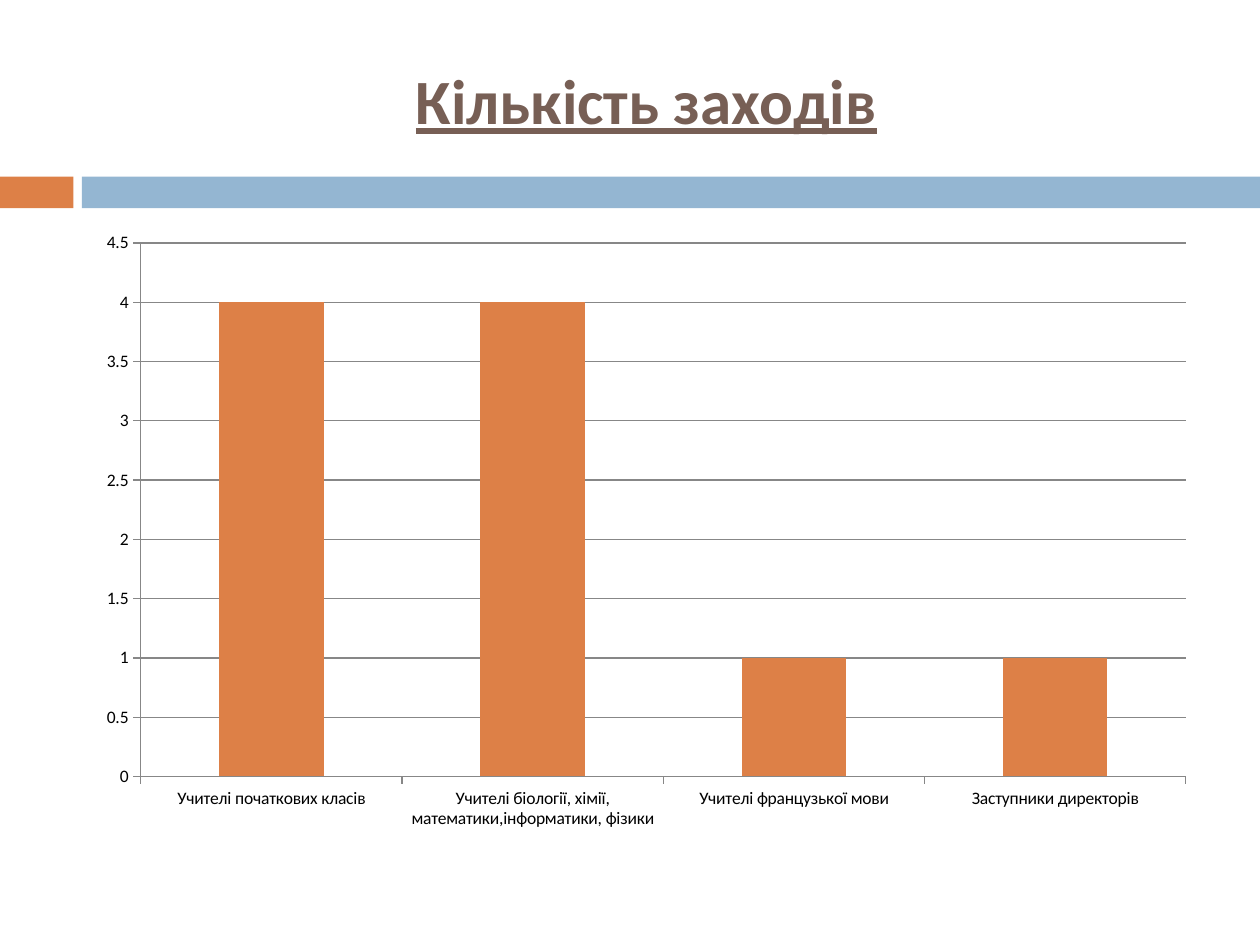
from pptx import Presentation
from pptx import util as u
from pptx.chart.data import CategoryChartData
from pptx.dml.color import RGBColor
from pptx.enum import chart as chart_enum
from pptx.enum import shapes, text

ORANGE = RGBColor(0xDD, 0x80, 0x47)
BLUE = RGBColor(0x94, 0xB6, 0xD2)
BROWN = RGBColor(0x77, 0x5F, 0x55)
GREY = RGBColor(0x87, 0x87, 0x87)
BLACK = RGBColor(0, 0, 0)
FONT = "Calibri"

SLIDE_WIDTH, SLIDE_HEIGHT = u.Cm(25.4), u.Cm(19.05)
CONTENT_LEFT, CONTENT_WIDTH = u.Cm(1.7), u.Cm(22.66)

EVENTS = {
    "Учителі початкових класів": 4,
    "Учителі біології, хімії, математики,інформатики, фізики": 4,
    "Учителі французької мови": 1,
    "Заступники директорів": 1,
}


def add_band(slide, left, top, width, height):
    """Draw the divider: a short orange block, a gap and a long blue bar."""
    block_width, gap = u.Cm(1.48), u.Cm(0.17)
    bar_offset = block_width + gap
    for offset, part_width, color in (
        (0, block_width, ORANGE),
        (bar_offset, width - bar_offset, BLUE),
    ):
        shape = slide.shapes.add_shape(
            shapes.MSO_SHAPE.RECTANGLE, left + offset, top, part_width, height
        )
        shape.shadow.inherit = False
        shape.fill.solid()
        shape.fill.fore_color.rgb = color
        shape.line.fill.background()


def add_title(slide, left, top, width, height):
    """Place and format the title placeholder."""
    title = slide.shapes.title
    title.left, title.top, title.width, title.height = left, top, width, height
    frame = title.text_frame
    frame.text = "Кількість заходів"
    frame.vertical_anchor = text.MSO_ANCHOR.MIDDLE
    paragraph = frame.paragraphs[0]
    paragraph.alignment = text.PP_ALIGN.CENTER
    font = paragraph.runs[0].font
    font.name, font.size = FONT, u.Pt(36)
    font.bold = font.underline = True
    font.color.rgb = BROWN


def add_events_chart(slide, left, top, width, height):
    """Add the column chart of events for each group of staff."""
    data = CategoryChartData()
    data.categories = list(EVENTS)
    data.add_series("Series 1", list(EVENTS.values()))
    chart = slide.shapes.add_chart(
        chart_enum.XL_CHART_TYPE.COLUMN_CLUSTERED, left, top, width, height, data
    ).chart
    chart.has_title = False
    chart.has_legend = False
    chart.font.name, chart.font.size = FONT, u.Pt(10)
    chart.font.color.rgb = BLACK

    plot = chart.plots[0]
    plot.gap_width = 150
    plot.vary_by_categories = False
    fill = plot.series[0].format.fill
    fill.solid()
    fill.fore_color.rgb = ORANGE

    value_axis = chart.value_axis
    value_axis.minimum_scale, value_axis.maximum_scale = 0, 4.5
    value_axis.major_unit = 0.5
    value_axis.has_major_gridlines = True
    for axis in (chart.category_axis, value_axis):
        axis.major_tick_mark = chart_enum.XL_TICK_MARK.OUTSIDE
    for part in (chart.category_axis, value_axis, value_axis.major_gridlines):
        part.format.line.color.rgb = GREY
        part.format.line.width = u.Pt(0.75)


def main():
    """Build the slide and save it."""
    presentation = Presentation()
    presentation.slide_width = SLIDE_WIDTH
    presentation.slide_height = SLIDE_HEIGHT
    slide = presentation.slides.add_slide(presentation.slide_layouts[5])
    add_band(slide, 0, u.Cm(3.56), SLIDE_WIDTH, u.Cm(0.64))
    add_title(slide, CONTENT_LEFT, u.Cm(0.64), CONTENT_WIDTH, u.Cm(2.74))
    add_events_chart(slide, CONTENT_LEFT, u.Cm(4.45), CONTENT_WIDTH, u.Cm(12.5))
    presentation.save("out.pptx")


if __name__ == "__main__":
    main()
